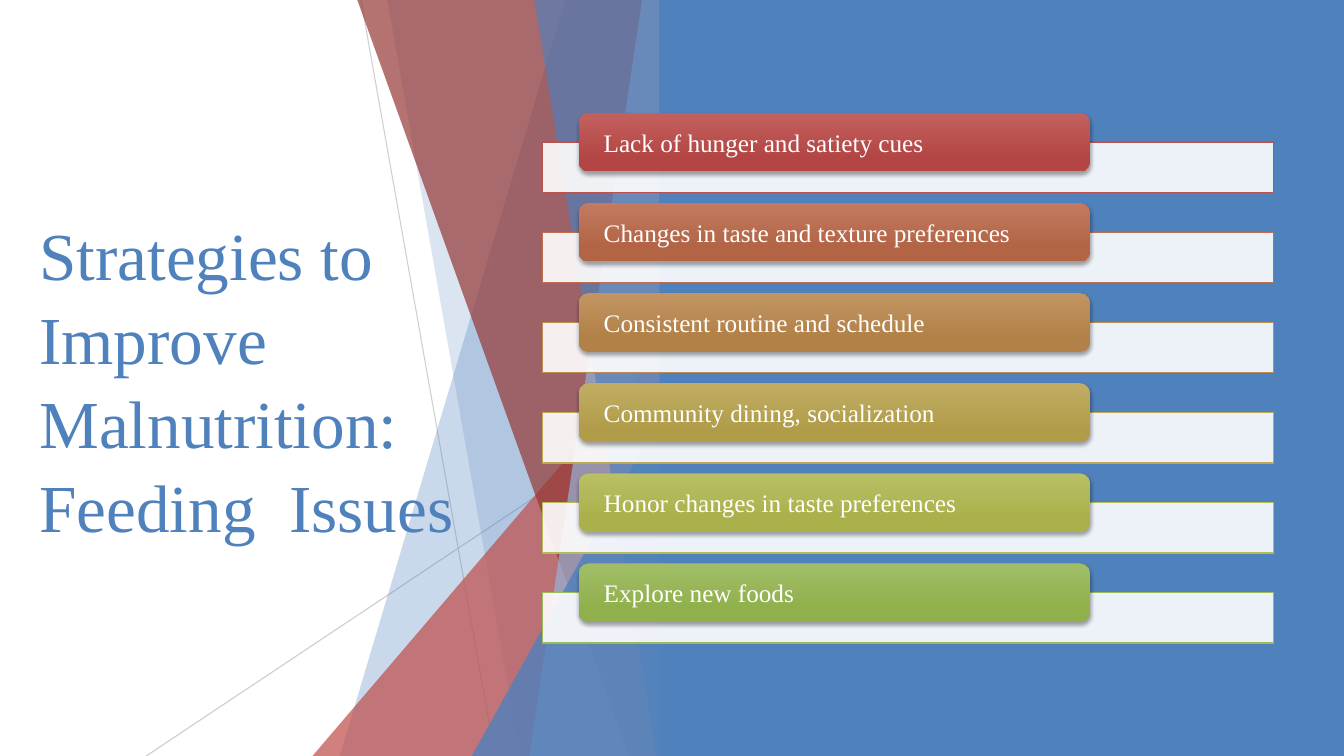
from dataclasses import dataclass

from lxml import etree
from pptx import Presentation
from pptx.dml.color import RGBColor
from pptx.enum.shapes import MSO_CONNECTOR, MSO_SHAPE
from pptx.enum.text import MSO_ANCHOR, MSO_AUTO_SIZE, PP_ALIGN
from pptx.oxml.ns import qn
from pptx.util import Inches, Pt

STRAIGHT = MSO_CONNECTOR.STRAIGHT
RECTANGLE = MSO_SHAPE.RECTANGLE
ROUNDED = MSO_SHAPE.ROUNDED_RECTANGLE
TRIANGLE = MSO_SHAPE.ISOSCELES_TRIANGLE
MIDDLE = MSO_ANCHOR.MIDDLE
LEFT = PP_ALIGN.LEFT
FIXED = MSO_AUTO_SIZE.NONE

COLOURS = {"white": "FFFFFF", "black": "000000", "blue": "4F81BD", "red": "C0504D",
           "maroon": "953735", "sky": "95B3D7", "grey": "BFBFBF"}
FONT = "Times New Roman"
PAGE_WIDTH, PAGE_HEIGHT = 13.33, 7.5
FACET_RIGHT = 6.66
FACET_TOP = -0.01
FIRST_ROW, LAST_ROW = 1.41, 5.88


@dataclass
class Ray:
    start: tuple[float, float]
    end: tuple[float, float]
    opacity: int


@dataclass
class Facet:
    """A slab from a slanted left edge to the common right edge."""
    top_left: float
    bottom_left: float
    colour: str
    opacity: int


@dataclass
class Corner:
    """A right triangle filling the bottom right corner."""
    left: float
    top: float
    colour: str
    opacity: int


@dataclass
class Strategy:
    text: str
    outline: str
    light: str
    dark: str


RAYS = [Ray((3.58, 0), (4.91, 7.5), 75), Ray((6.66, 4.03), (1.45, 7.5), 80)]

PIECES = [
    Facet(5.61, 3.37, "blue", 30),
    Facet(3.84, 5.16, "blue", 20),
    Corner(3.1, 3.33, "red", 72),
    Facet(3.54, 6.24, "maroon", 70),
    Facet(6.37, 5.25, "sky", 70),
    Facet(5.3, 6.51, "blue", 65),
    Corner(4.68, 3.93, "blue", 80),
]

STRATEGIES = [
    Strategy("Lack of hunger and satiety cues", "C0504D", "C3605E", "B34644"),
    Strategy("Changes in taste and texture preferences", "BF6F4F", "C27A60", "B26445"),
    Strategy("Consistent routine and schedule", "BE8D52", "C19462", "B28147"),
    Strategy("Community dining, socialization", "BDA954", "C0AD64", "B19D49"),
    Strategy("Honor changes in taste preferences", "B5BC57", "B9BF65", "AAB14B"),
    Strategy("Explore new foods", "9BBB59", "A1BE67", "90B04C"),
]


def rgb(value: str) -> RGBColor:
    return RGBColor.from_string(value)


def apply(target, formats: dict) -> None:
    for name, value in formats.items():
        setattr(target, name, value)


def set_opacity(shape, percent: int) -> None:
    """Make the first colour of the shape see-through."""
    colour = next(shape._element.spPr.iter(qn("a:srgbClr")))
    etree.SubElement(colour, qn("a:alpha"), val=str(percent * 1000))


def paint(shape, colour: str, opacity: int = 100) -> None:
    shape.shadow.inherit = False
    shape.line.fill.background()
    shape.fill.solid()
    shape.fill.fore_color.rgb = rgb(COLOURS[colour])
    if opacity < 100:
        set_opacity(shape, opacity)


def add_preset(page, kind, left: float, top: float, width: float, height: float):
    return page.shapes.add_shape(kind, Inches(left), Inches(top), Inches(width), Inches(height))


def format_text(shape, text: str, size: int, colour: str, frame_formats: dict) -> None:
    frame = shape.text_frame
    apply(frame, {"word_wrap": True, "vertical_anchor": MIDDLE, **frame_formats})
    frame.text = text
    para = frame.paragraphs[0]
    para.alignment = LEFT
    apply(para.font, {"name": FONT, "size": Pt(size)})
    para.font.color.rgb = rgb(COLOURS[colour])


def add_ray(page, ray: Ray) -> None:
    line = page.shapes.add_connector(STRAIGHT, *map(Inches, ray.start + ray.end))
    line.line.width = Pt(0.75)
    line.line.color.rgb = rgb(COLOURS["grey"])
    set_opacity(line, ray.opacity)
    etree.SubElement(line._element.spPr, qn("a:effectLst"))


def add_piece(page, piece: Facet | Corner) -> None:
    if isinstance(piece, Corner):
        shape = add_preset(page, TRIANGLE, piece.left, piece.top,
                           FACET_RIGHT - piece.left, PAGE_HEIGHT - piece.top)
        shape.adjustments[0] = 1
    else:
        builder = page.shapes.build_freeform(Inches(piece.top_left), Inches(FACET_TOP))
        corners = [(FACET_RIGHT, FACET_TOP), (FACET_RIGHT, PAGE_HEIGHT),
                   (piece.bottom_left, PAGE_HEIGHT)]
        builder.add_line_segments([(Inches(x), Inches(y)) for x, y in corners])
        shape = builder.convert_to_shape()
    paint(shape, piece.colour, piece.opacity)


def add_drop_shadow(shape) -> None:
    shape.shadow.inherit = False
    effects = shape._element.spPr.find(qn("a:effectLst"))
    shadow = etree.SubElement(effects, qn("a:outerShdw"), blurRad=str(Pt(3)), dist=str(Pt(2)),
                              dir="5400000", rotWithShape="0")
    colour = etree.SubElement(shadow, qn("a:srgbClr"), val=COLOURS["black"])
    etree.SubElement(colour, qn("a:alpha"), val="35000")


def add_strategy(page, strategy: Strategy, top: float) -> None:
    # Pale bar behind
    bar = add_preset(page, RECTANGLE, 5.38, top, 7.25, 0.5)
    paint(bar, "white", 90)
    bar.line.color.rgb = rgb(strategy.outline)
    bar.line.width = Pt(1)

    # Shaded label in front
    label = add_preset(page, ROUNDED, 5.74, top - 0.29, 5.07, 0.58)
    label.line.fill.background()
    label.fill.gradient()
    label.fill.gradient_angle = 270
    shades = [(0, strategy.light), (0.78, strategy.dark)]
    for stop, (position, colour) in zip(label.fill.gradient_stops, shades):
        stop.position = position
        stop.color.rgb = rgb(colour)
    add_drop_shadow(label)
    format_text(label, strategy.text, 18, "white",
                {"margin_left": Inches(0.22), "margin_right": Inches(0.22),
                 "margin_top": 0, "margin_bottom": 0})


def main() -> None:
    deck = Presentation()
    apply(deck, {"slide_width": Inches(PAGE_WIDTH), "slide_height": Inches(PAGE_HEIGHT)})
    page = deck.slides.add_slide(deck.slide_layouts[5])

    # Title
    title = page.shapes.title
    apply(title, {"left": Inches(0.29), "top": Inches(1.51),
                  "width": Inches(4.63), "height": Inches(4.48)})
    format_text(title, "Strategies to Improve Malnutrition:\vFeeding  Issues", 48, "blue",
                {"auto_size": FIXED})
    title.text_frame.paragraphs[0].line_spacing = 1.04

    # Faceted divider and blue panel
    for ray in RAYS:
        add_ray(page, ray)
    for piece in PIECES:
        add_piece(page, piece)
    paint(add_preset(page, RECTANGLE, 6.54, 0, PAGE_WIDTH - 6.54, PAGE_HEIGHT), "blue")

    # List of strategies
    pitch = (LAST_ROW - FIRST_ROW) / (len(STRATEGIES) - 1)
    for row, strategy in enumerate(STRATEGIES):
        add_strategy(page, strategy, FIRST_ROW + row * pitch)

    deck.save("out.pptx")


if __name__ == "__main__":
    main()
